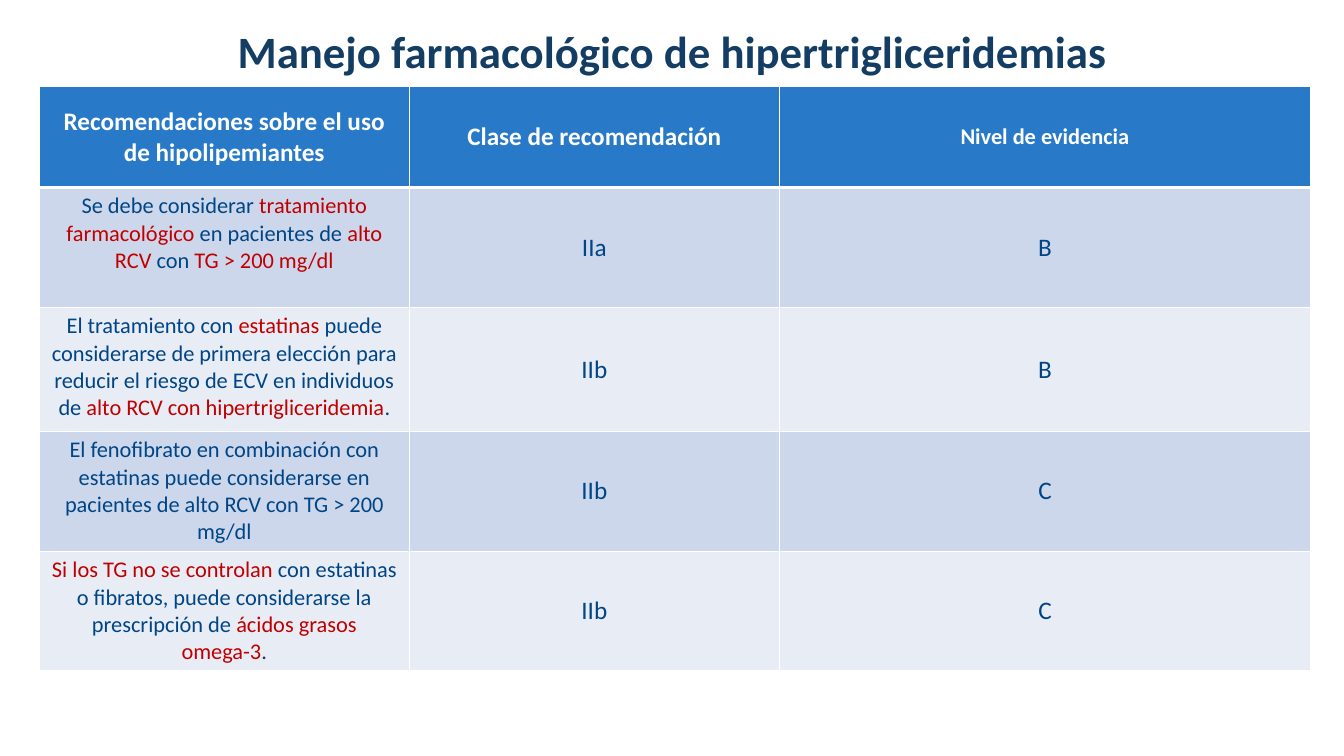
from dataclasses import dataclass

from lxml import etree
from pptx import Presentation
from pptx.dml.color import RGBColor
from pptx.enum.text import MSO_ANCHOR, PP_ALIGN
from pptx.oxml.ns import qn
from pptx.slide import Slide
from pptx.table import _Cell
from pptx.text.text import TextFrame
from pptx.util import Inches, Pt

CENTER = PP_ALIGN.CENTER
TOP, MIDDLE = MSO_ANCHOR.TOP, MSO_ANCHOR.MIDDLE

FONT = "Calibri"
COLORS = {
    "white": "FFFFFF",
    "navy": "143D64",
    "text": "004586",
    "key": "C00000",
    "header": "287AC8",
    "odd": "CDD7EB",
    "even": "E8ECF5",
}
COLUMN_WIDTHS = (3.67, 3.67, 5.27)
ROW_HEIGHTS = (1.0, 1.19, 1.23, 1.19, 1.18)


@dataclass(frozen=True)
class Span:
    text: str
    color: str = "text"


@dataclass(frozen=True)
class Recommendation:
    advice: tuple[Span, ...]
    grade: str
    evidence: str


HEADERS = (
    ("Recomendaciones sobre el uso de hipolipemiantes", 18),
    ("Clase de recomendación", 18),
    ("Nivel de evidencia", 16),
)
RECOMMENDATIONS = (
    Recommendation(
        (
            Span("Se debe considerar "),
            Span("tratamiento farmacológico ", "key"),
            Span("en pacientes de "),
            Span("alto RCV ", "key"),
            Span("con "),
            Span("TG > 200 mg/dl", "key"),
        ),
        "IIa",
        "B",
    ),
    Recommendation(
        (
            Span("El tratamiento con "),
            Span("estatinas", "key"),
            Span(" puede considerarse de primera elección para reducir "
                 "el riesgo de ECV en individuos de "),
            Span("alto RCV con hipertrigliceridemia", "key"),
            Span("."),
        ),
        "IIb",
        "B",
    ),
    Recommendation(
        (Span("El fenofibrato en combinación con estatinas puede considerarse "
              "en pacientes de alto RCV con TG > 200 mg/dl"),),
        "IIb",
        "C",
    ),
    Recommendation(
        (
            Span("Si los TG no se controlan ", "key"),
            Span("con estatinas o fibratos, puede considerarse la prescripción de "),
            Span("ácidos grasos omega-3", "key"),
            Span(".", "navy"),
        ),
        "IIb",
        "C",
    ),
)


def write_spans(frame: TextFrame, spans: tuple[Span, ...], size: int, bold: bool) -> None:
    para = frame.paragraphs[0]
    para.alignment = CENTER
    for span in spans:
        run = para.add_run()
        run.text = span.text
        run.font.name = FONT
        run.font.size = Pt(size)
        run.font.bold = bold
        run.font.color.rgb = RGBColor.from_string(COLORS[span.color])


def set_borders(cell: _Cell, top: int, bottom: int) -> None:
    """Draw white cell edges; must run before the cell is filled."""
    properties = cell._tc.get_or_add_tcPr()
    for side, width in (("L", 1), ("R", 1), ("T", top), ("B", bottom)):
        line = etree.SubElement(properties, qn(f"a:ln{side}"), w=str(Pt(width)))
        fill = etree.SubElement(line, qn("a:solidFill"))
        etree.SubElement(fill, qn("a:srgbClr"), val=COLORS["white"])


def fill_cell(cell: _Cell, row: int, spans: tuple[Span, ...], size: int,
              anchor: MSO_ANCHOR = MIDDLE) -> None:
    is_header = row == 0
    set_borders(cell, top=3 if row == 1 else 1, bottom=3 if is_header else 1)
    color = "header" if is_header else ("odd" if row % 2 else "even")
    cell.fill.solid()
    cell.fill.fore_color.rgb = RGBColor.from_string(COLORS[color])
    cell.vertical_anchor = anchor
    write_spans(cell.text_frame, spans, size, bold=is_header)


def add_title(page: Slide) -> None:
    title = page.shapes.title
    title.left, title.top = Inches(0.67), Inches(0.17)
    title.width, title.height = Inches(12), Inches(0.66)
    title.text_frame.vertical_anchor = MIDDLE
    heading = Span("Manejo farmacológico de hipertrigliceridemias", "navy")
    write_spans(title.text_frame, (heading,), 32, bold=True)


def add_recommendations(page: Slide) -> None:
    table = page.shapes.add_table(
        len(ROW_HEIGHTS), len(COLUMN_WIDTHS), Inches(0.39), Inches(0.86),
        Inches(sum(COLUMN_WIDTHS)), Inches(sum(ROW_HEIGHTS)),
    ).table
    table.horz_banding = False
    for column, width in zip(table.columns, COLUMN_WIDTHS):
        column.width = Inches(width)
    for row, height in zip(table.rows, ROW_HEIGHTS):
        row.height = Inches(height)

    for column, (label, size) in enumerate(HEADERS):
        fill_cell(table.cell(0, column), 0, (Span(label, "white"),), size)
    for row, item in enumerate(RECOMMENDATIONS, start=1):
        fill_cell(table.cell(row, 0), row, item.advice, 16, TOP)
        fill_cell(table.cell(row, 1), row, (Span(item.grade),), 18)
        fill_cell(table.cell(row, 2), row, (Span(item.evidence),), 18)


def main() -> None:
    deck = Presentation()
    deck.slide_width, deck.slide_height = Inches(13.33), Inches(7.5)
    title_only = deck.slide_layouts.get_by_name("Title Only")
    page = deck.slides.add_slide(title_only)
    add_title(page)
    add_recommendations(page)
    deck.save("out.pptx")


if __name__ == "__main__":
    main()
